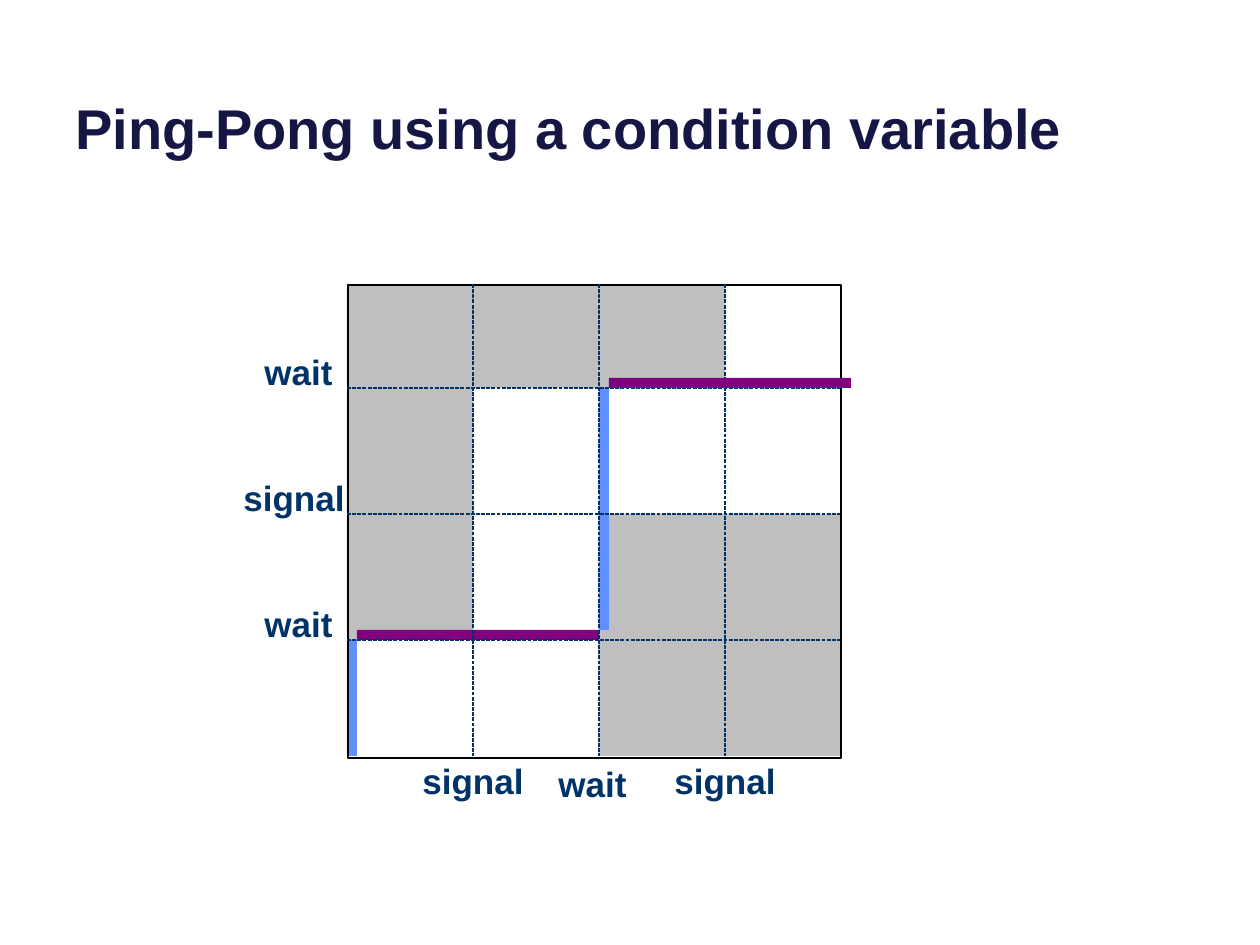
from pptx import Presentation
from pptx.dml.color import RGBColor
from pptx.enum.dml import MSO_LINE
from pptx.enum.shapes import MSO_CONNECTOR, MSO_SHAPE
from pptx.enum.text import MSO_ANCHOR, MSO_AUTO_SIZE
from pptx.oxml.ns import qn
from pptx.util import Inches, Pt
from lxml.etree import SubElement

SCALE = Inches(1) / 126
FONT = "Arial"
TITLE = "161645"
NAVY = "003367"
GRAY = "BFBFBF"
BLUE = "618FFD"
PURPLE = "800080"
BLACK = "000000"


def px(*lengths):
    return [round(length * SCALE) for length in lengths]


def color(value):
    return RGBColor.from_string(value)


class Painter:
    def __init__(self, page):
        self.page = page

    def rectangle(self, left, top, width, height, fill=None, line=None):
        shape = self.page.shapes.add_shape(MSO_SHAPE.RECTANGLE, *px(left, top, width, height))
        shape.shadow.inherit = False
        if fill:
            shape.fill.solid()
            shape.fill.fore_color.rgb = color(fill)
        else:
            shape.fill.background()
        if line:
            shape.line.color.rgb = color(line)
            shape.line.width = Pt(1)
        else:
            shape.line.fill.background()

    def text(self, words, left, top, width, height, size=20, ink=NAVY,
             anchor=MSO_ANCHOR.MIDDLE, fit=MSO_AUTO_SIZE.SHAPE_TO_FIT_TEXT):
        box = self.page.shapes.add_textbox(*px(left, top, width, height))
        frame = box.text_frame
        frame.word_wrap = True
        frame.auto_size = fit
        frame.vertical_anchor = anchor
        frame.text = words
        span = frame.paragraphs[0].runs[0]
        span.font.name = FONT
        span.font.size = Pt(size)
        span.font.bold = True
        span.font.color.rgb = color(ink)

    def dashed_line(self, x1, y1, x2, y2):
        line = self.page.shapes.add_connector(MSO_CONNECTOR.STRAIGHT, *px(x1, y1, x2, y2))
        line.line.color.rgb = color(NAVY)
        line.line.width = Pt(0.75)
        line.line.dash_style = MSO_LINE.SQUARE_DOT
        SubElement(line._element.spPr, qn("a:effectLst"))


def main():
    deck = Presentation()
    deck.slide_width, deck.slide_height = px(1260, 945)
    page = deck.slides.add_slide(deck.slide_layouts[6])
    painter = Painter(page)

    cell, bar = 126, 10
    left, top, right, bottom = 347, 284, 840, 756
    columns = [left + cell * step for step in (1, 2, 3)]
    rows = [388 + cell * step for step in range(3)]

    painter.rectangle(left, top, cell, rows[2] - top, GRAY)
    painter.rectangle(columns[1], rows[1], right - columns[1], bottom - rows[1], GRAY)
    painter.rectangle(columns[0], top, 2 * cell, rows[0] - top, GRAY)
    painter.text("Ping-Pong using a condition variable", 63, -47, 1134, 214, 32, TITLE,
                 MSO_ANCHOR.BOTTOM, MSO_AUTO_SIZE.NONE)

    run = 2 * cell - bar
    painter.rectangle(left, rows[2], bar, bottom - rows[2], BLUE)
    painter.rectangle(left + bar, rows[2] - bar, run, bar, PURPLE)
    painter.rectangle(348, 285, 493, 473, line=BLACK)
    painter.rectangle(columns[1], rows[0], bar, run, BLUE)

    for words, x, y in zip(("wait", "signal", "wait"), (252, 231, 252), rows):
        painter.text(words, x, y - 44, 95 if words == "wait" else 147, 55)
    for words, x, y in (("signal", 410, 753), ("wait", 546, 756), ("signal", 662, 753)):
        painter.text(words, x, y, 95 if words == "wait" else 147, 55)

    for y in reversed(rows):
        painter.dashed_line(left, y, right, y)
    for x in columns:
        painter.dashed_line(x, top, x, bottom)
    painter.rectangle(columns[1] + bar, rows[0] - bar, run, bar, PURPLE)

    deck.save("out.pptx")


if __name__ == "__main__":
    main()
